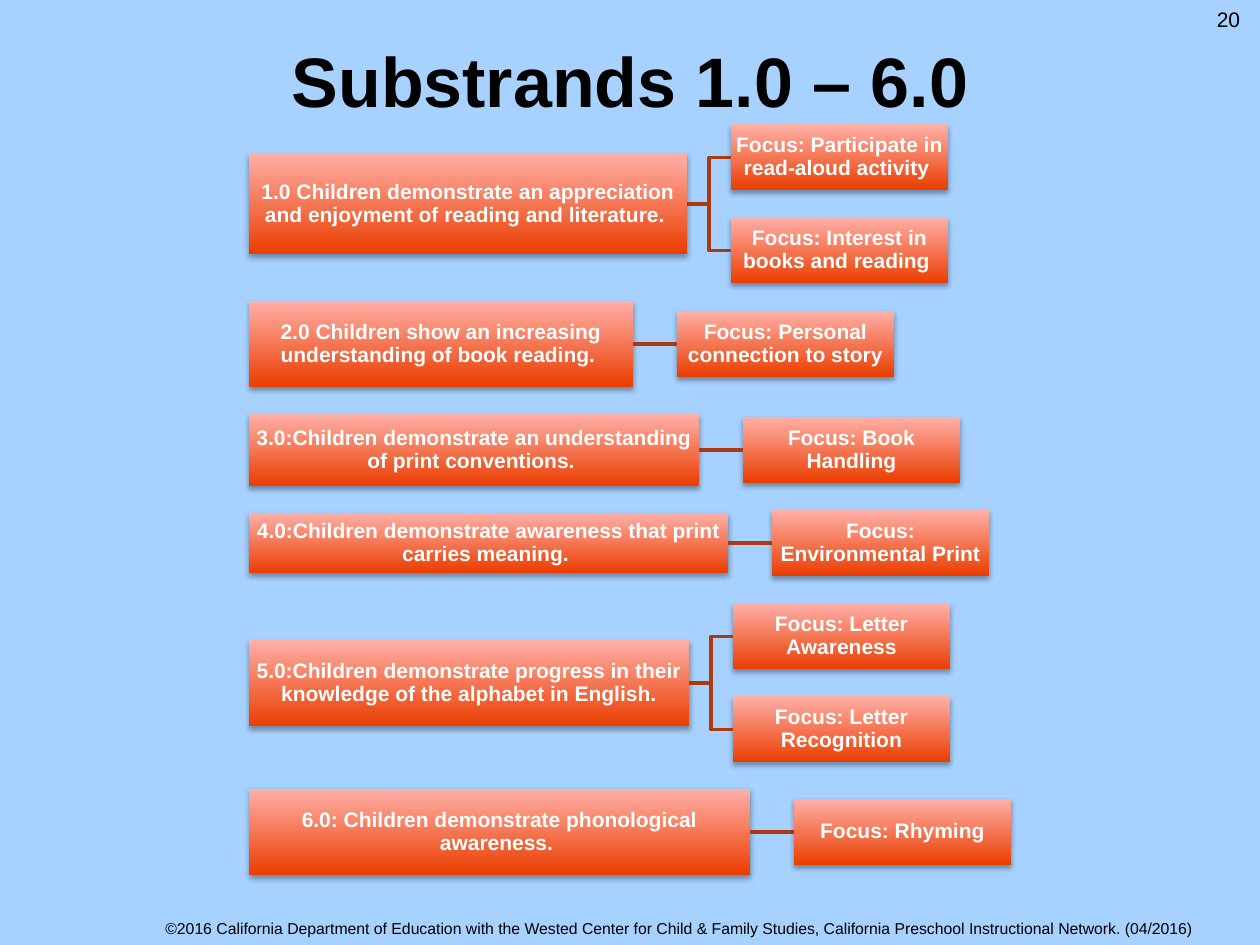
from lxml.etree import SubElement
from pptx import Presentation
from pptx.dml.color import RGBColor
from pptx.enum.shapes import MSO_CONNECTOR, MSO_SHAPE
from pptx.enum.text import MSO_ANCHOR, PP_ALIGN
from pptx.oxml.ns import qn
from pptx.util import Pt

HUES = {"back": "A7D1FF", "dark": "EA3D00", "light": "FFB0A8",
        "line": "A93A12", "ink": "000000", "white": "FFFFFF"}
RGB = {name: RGBColor.from_string(code) for name, code in HUES.items()}
SCALE = 914400 / 126


def px(*sizes):
    return [round(n * SCALE) for n in sizes]


def write(shape, text, size, hue="ink", bold=False, anchor=MSO_ANCHOR.MIDDLE):
    frame = shape.text_frame
    frame.word_wrap = True
    frame.vertical_anchor = anchor
    para = frame.paragraphs[0]
    para.alignment = PP_ALIGN.CENTER
    run = para.add_run()
    run.text = text
    run.font.name = "Arial"
    run.font.size = Pt(size)
    run.font.bold = bold
    run.font.color.rgb = RGB[hue]
    return frame


deck = Presentation()
deck.slide_width, deck.slide_height = px(1260, 945)
slide = deck.slides.add_slide(deck.slide_layouts[5])
slide.background.fill.solid()
slide.background.fill.fore_color.rgb = RGB["back"]
shapes = slide.shapes

# Title, footer and page number
title = shapes.title
title.left, title.top, title.width, title.height = px(63, 0, 1134, 158)
write(title, "Substrands 1.0 – 6.0", 40, bold=True)
foot = shapes.add_textbox(*px(102, 912, 1158, 32))
write(foot, "©2016 California Department of Education with the Wested Center for "
      "Child & Family Studies, California Preschool Instructional Network. (04/2016) ", 9)
page = shapes.add_textbox(*px(1197, 0, 63, 50))
write(page, "20", 12, anchor=MSO_ANCHOR.TOP)

# Substrands: text, middle, width, height, focus texts
rows = [
    ("1.0 Children demonstrate an appreciation and enjoyment of reading and literature. ",
     204, 438, 101, ["Focus: Participate in read-aloud activity ",
                     "Focus: Interest in books and reading "]),
    ("2.0 Children show an increasing understanding of book reading. ",
     344, 384, 86, ["Focus: Personal connection to story"]),
    ("3.0:Children demonstrate an understanding of print conventions. ",
     450, 450, 72, ["Focus: Book Handling"]),
    ("4.0:Children demonstrate awareness that print carries meaning. ",
     543, 479, 60, ["Focus: Environmental Print"]),
    ("5.0:Children demonstrate progress in their knowledge of the alphabet in English.",
     683, 440, 87, ["Focus: Letter Awareness", "Focus: Letter Recognition"]),
    ("6.0: Children demonstrate phonological awareness. ",
     832, 501, 86, ["Focus: Rhyming"]),
]
LEFT, GAP, STEP = 249, 44, 93
WIDE, HIGH = 217, 66

for text, mid, width, height, focus in rows:
    # Substrand box first, then its focus boxes
    cells = [(text, LEFT, mid, width, height)]
    for i, note in enumerate(focus):
        level = mid + STEP * (i - (len(focus) - 1) / 2)
        cells.append((note, LEFT + width + GAP, level, WIDE, HIGH))

    boxes = []
    for label, x, y, w, h in cells:
        box = shapes.add_shape(MSO_SHAPE.RECTANGLE, *px(x, y - h / 2, w, h))
        box.line.fill.background()
        box.fill.gradient()
        box.fill.gradient_angle = 90
        for stop, hue, spot in zip(box.fill.gradient_stops, ("dark", "light"), (0, 1)):
            stop.color.rgb = RGB[hue]
            stop.position = spot

        # Soft shadow below the box
        box.shadow.inherit = False
        glow = SubElement(box._element.spPr.find(qn("a:effectLst")), qn("a:outerShdw"),
                          blurRad=str(Pt(3.1)), dist=str(Pt(1.8)),
                          dir="5400000", rotWithShape="0")
        tint = SubElement(glow, qn("a:srgbClr"), val=HUES["ink"])
        SubElement(tint, qn("a:alpha"), val="35000")

        frame = write(box, label, 12, "white", True)
        frame.paragraphs[0].line_spacing = 0.9
        frame.margin_left = frame.margin_right = px(1)[0]
        frame.margin_top = frame.margin_bottom = px(1)[0]
        boxes.append(box)

    # Links from the substrand to each focus
    kind = MSO_CONNECTOR.ELBOW if len(focus) > 1 else MSO_CONNECTOR.STRAIGHT
    for box in boxes[1:]:
        link = shapes.add_connector(kind, 0, 0, 0, 0)
        link.begin_connect(boxes[0], 3)
        link.end_connect(box, 1)
        link.line.color.rgb = RGB["line"]
        link.line.width = Pt(2)
        SubElement(link._element.spPr, qn("a:effectLst"))

deck.save("out.pptx")
